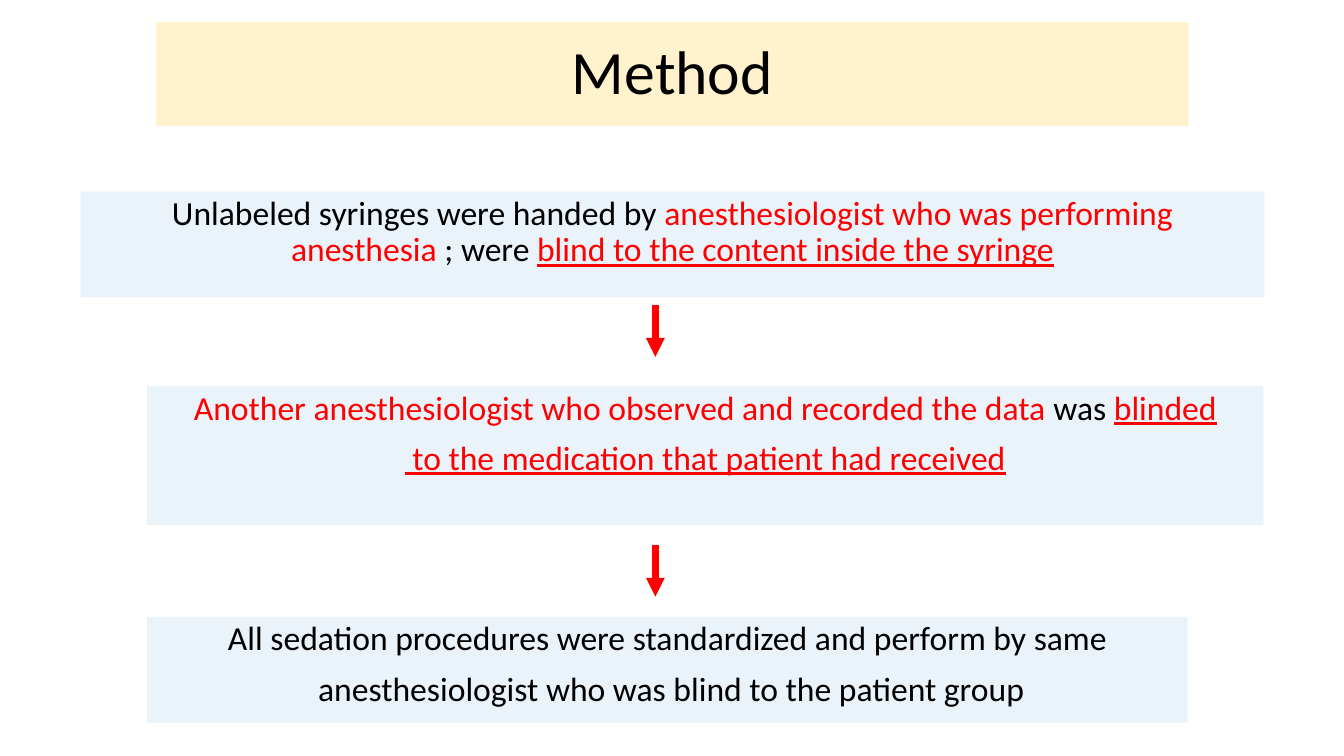
import pptx
import pptx.util
import pptx.dml.color
import pptx.enum.shapes
import pptx.enum.text
import pptx.oxml
import pptx.oxml.ns

Inches, Pt = pptx.util.Inches, pptx.util.Pt
RGB = pptx.dml.color.RGBColor.from_string
THEME = {
    "font": "Calibri", "title_size": Pt(44), "body_size": Pt(24), "arrow_width": Pt(4.5),
    "title_fill": RGB("FFF2CC"), "step_fill": RGB("EAF2FA"),
    "text": RGB("000000"), "accent": RGB("FF0000"),
}

prs = pptx.Presentation()
prs.slide_width, prs.slide_height = Inches(13.33), Inches(7.5)
s = prs.slides.add_slide(prs.slide_layouts[5])


def format_paragraph(p, size):
    p.alignment = pptx.enum.text.PP_ALIGN.CENTER
    p.line_spacing = 0.9
    p.font.name, p.font.size = THEME["font"], size
    p.font.color.rgb = THEME["text"]


# Title band
title = s.shapes.title
title.left, title.top, title.width, title.height = map(Inches, (1.55, 0.22, 10.24, 1.03))
title.fill.solid()
title.fill.fore_color.rgb = THEME["title_fill"]
tf = title.text_frame
tf.text = "Method"
tf.auto_size = pptx.enum.text.MSO_AUTO_SIZE.NONE
tf.vertical_anchor = pptx.enum.text.MSO_ANCHOR.MIDDLE
format_paragraph(tf.paragraphs[0], THEME["title_size"])

# Steps: box, then paragraphs of (text, colour, underlined) runs
STEPS = [
    ((0.8, 1.9, 11.74, 1.05), [
        [("Unlabeled syringes were handed by ", "text", False),
         ("anesthesiologist who was performing anesthesia ", "accent", False),
         ("; were ", "text", False),
         ("blind to the content inside the syringe", "accent", True)]]),
    ((1.46, 3.83, 11.07, 1.38), [
        [("Another anesthesiologist who observed and recorded the data ", "accent", False),
         ("was ", "text", False),
         ("blinded", "accent", True)],
        [(" to the medication that patient had received", "accent", True)]]),
    ((1.46, 6.12, 10.32, 1.05), [
        [("All sedation procedures were standardized and perform by same", "text", False)],
        [(" anesthesiologist who was blind to the patient group", "text", False)]]),
]
for box, paragraphs in STEPS:
    sp = s.shapes.add_shape(pptx.enum.shapes.MSO_SHAPE.RECTANGLE, *map(Inches, box))
    sp.shadow.inherit = False
    sp.fill.solid()
    sp.fill.fore_color.rgb = THEME["step_fill"]
    sp.line.fill.background()
    tf = sp.text_frame
    tf.word_wrap = True
    tf.vertical_anchor = pptx.enum.text.MSO_ANCHOR.TOP
    for i, runs in enumerate(paragraphs):
        p = tf.add_paragraph() if i else tf.paragraphs[0]
        format_paragraph(p, THEME["body_size"])
        p.space_before = Pt(10)
        for text, color, underlined in runs:
            r = p.add_run()
            r.text = text
            r.font.color.rgb = THEME[color]
            if underlined:
                r.font.underline = True

# Arrows between the steps
ARROW_X, ARROW_LENGTH = 6.5, 0.51
for top in (3.03, 5.41):
    arrow = s.shapes.add_connector(
        pptx.enum.shapes.MSO_CONNECTOR.STRAIGHT,
        *map(Inches, (ARROW_X, top, ARROW_X, top + ARROW_LENGTH)))
    arrow.line.color.rgb = THEME["accent"]
    arrow.line.width = THEME["arrow_width"]
    ln = arrow.line._get_or_add_ln()
    ln.append(pptx.oxml.parse_xml(
        f'<a:tailEnd {pptx.oxml.ns.nsdecls("a")} type="triangle"/>'))
    ln.addnext(pptx.oxml.parse_xml(f'<a:effectLst {pptx.oxml.ns.nsdecls("a")}/>'))

prs.save("out.pptx")
